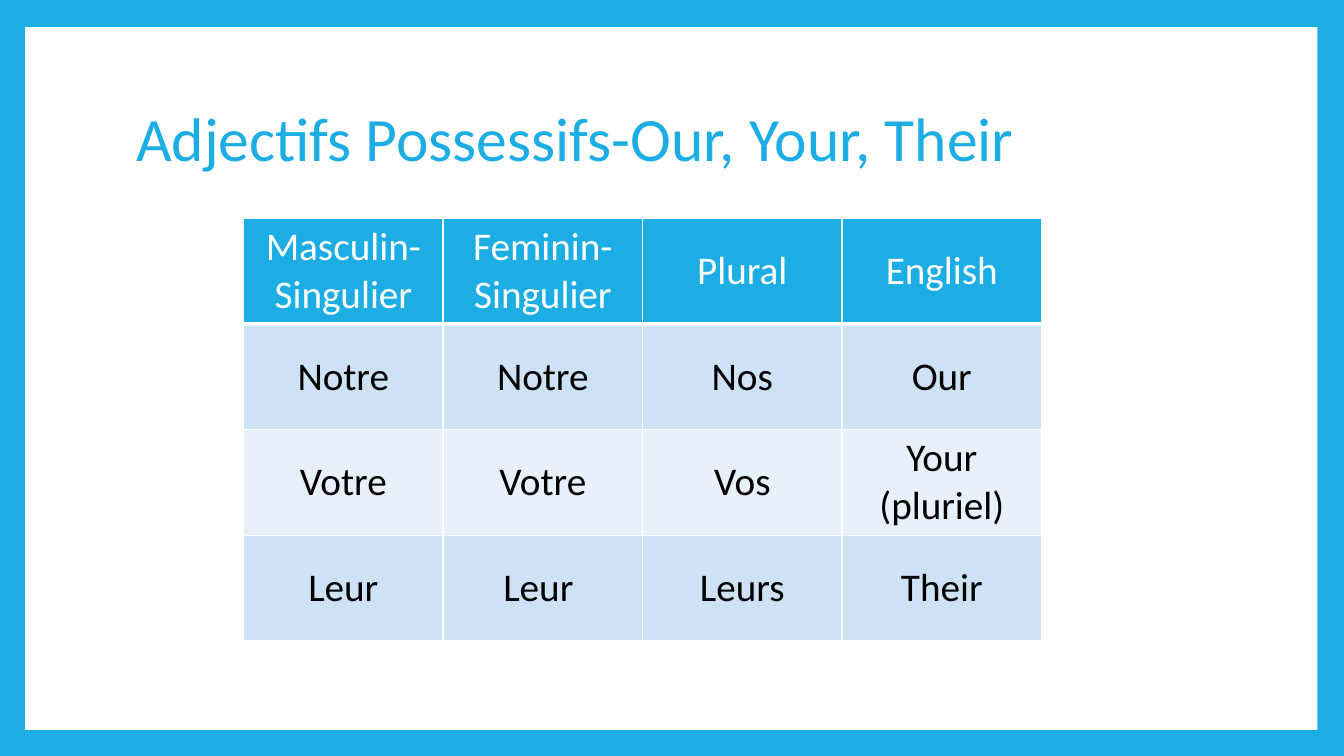
from lxml.etree import SubElement
from pptx import Presentation
from pptx.dml.color import RGBColor
from pptx.enum.shapes import MSO_SHAPE as Shape
from pptx.enum.text import MSO_ANCHOR as Anchor, MSO_AUTO_SIZE as AutoSize, PP_ALIGN as Align
from pptx.oxml.ns import qn
from pptx.util import Pt

BLUE, WHITE, BLACK = "1CADE4", "FFFFFF", "000000"
BANDS = ("CDE3F5", "E8F1FA")
HEADING = "Adjectifs Possessifs-Our, Your, Their"
ADJECTIVES = [
    ("Masculin- Singulier", "Feminin- Singulier", "Plural", "English"),
    ("Notre", "Notre", "Nos", "Our"),
    ("Votre", "Votre", "Vos", "Your (pluriel)"),
    ("Leur", "Leur ", "Leurs", "Their"),
]


def paint(fill, colour):
    fill.solid()
    fill.fore_color.rgb = RGBColor.from_string(colour)


def style(target, values):
    for name, value in values.items():
        setattr(target, name, value)


class LessonSlide:
    """Draws the elements of one framed lesson slide in a shared style."""

    def __init__(self, slide, font="Calibri"):
        self.slide = slide
        self.font = font

    def label(self, frame, text, size, colour, **layout):
        frame.text = text
        paragraph = frame.paragraphs[0]
        style(paragraph, layout)
        for run in paragraph.runs:
            style(run.font, {"name": self.font, "size": Pt(size), "bold": False})
            paint(run.font.fill, colour)

    def frame(self, border, inside, *box):
        paint(self.slide.background.fill, border)
        panel = self.slide.shapes.add_shape(Shape.RECTANGLE, *map(Pt, box))
        panel.shadow.inherit = False
        paint(panel.fill, inside)
        panel.line.fill.background()
        self.slide.shapes.title.element.addprevious(panel.element)

    def title(self, text, left, top, width, height):
        heading = self.slide.shapes.title
        style(heading, {"left": Pt(left), "top": Pt(top),
                        "width": Pt(width), "height": Pt(height)})
        style(heading.text_frame, {"vertical_anchor": Anchor.MIDDLE,
                                   "word_wrap": True, "auto_size": AutoSize.NONE})
        self.label(heading.text_frame, text, 44, BLUE,
                   alignment=Align.LEFT, line_spacing=0.9)

    def borders(self, cell, bottom):
        properties = cell._tc.get_or_add_tcPr()
        for side, width in {"L": 1, "R": 1, "T": 1, "B": bottom}.items():
            line = SubElement(properties, qn(f"a:ln{side}"), w=str(Pt(width)))
            solid = SubElement(line, qn("a:solidFill"))
            SubElement(solid, qn("a:srgbClr"), val=WHITE)

    def table(self, rows, left, top, column_width, row_height):
        columns = len(rows[0])
        grid = self.slide.shapes.add_table(
            len(rows), columns, Pt(left), Pt(top),
            Pt(column_width * columns), Pt(row_height * len(rows))).table
        for r, words in enumerate(rows):
            header = r == 0
            for c, word in enumerate(words):
                cell = grid.cell(r, c)
                cell.vertical_anchor = Anchor.MIDDLE
                self.borders(cell, 3 if header else 1)
                paint(cell.fill, BLUE if header else BANDS[(r - 1) % 2])
                self.label(cell.text_frame, word, 28, WHITE if header else BLACK,
                           alignment=Align.CENTER)


def main():
    deck = Presentation()
    style(deck, {"slide_width": Pt(960), "slide_height": Pt(540)})
    lesson = LessonSlide(deck.slides.add_slide(deck.slide_layouts[5]))
    lesson.frame(BLUE, WHITE, 18, 19.4, 923, 502)
    lesson.title(HEADING, 90, 48, 778, 106.5)
    lesson.table(ADJECTIVES, 174, 156, 142.5, 75.2)
    deck.save("out.pptx")


if __name__ == "__main__":
    main()
